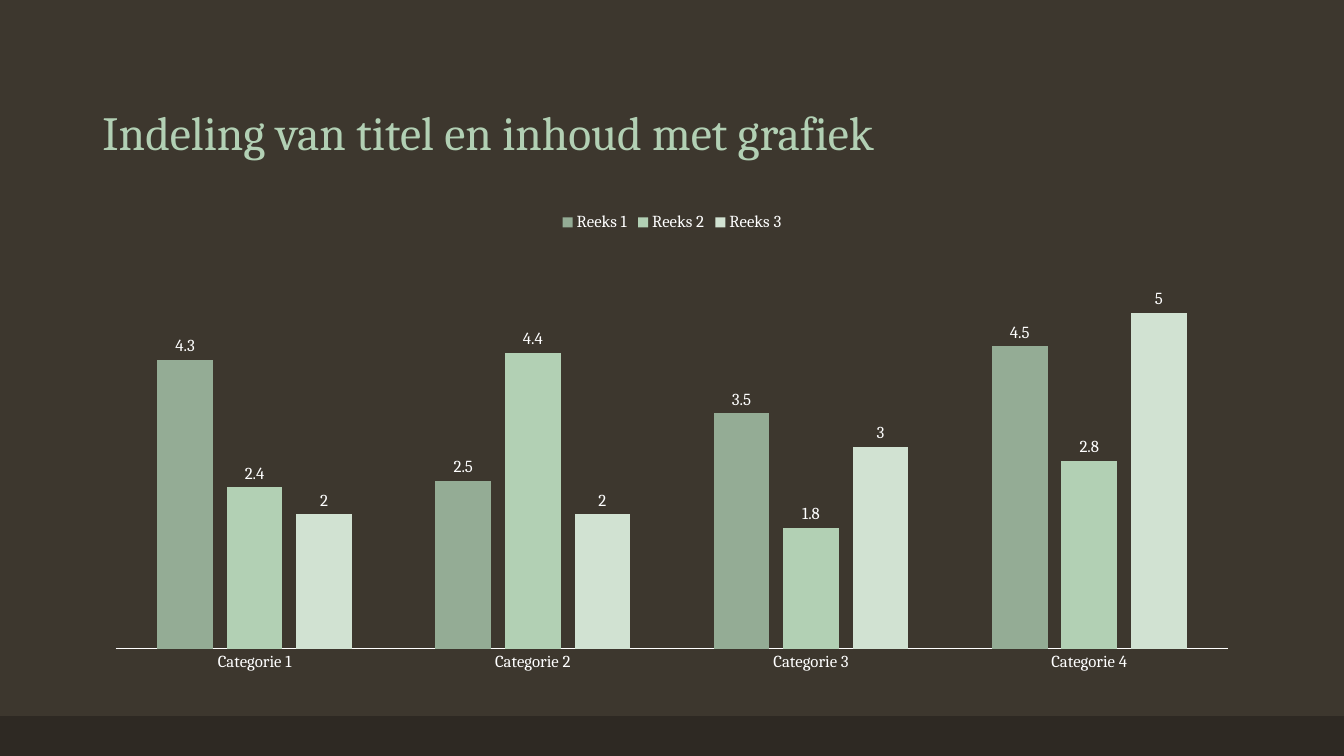
from dataclasses import dataclass

from pptx import Presentation
from pptx import util as u
from pptx.chart.data import CategoryChartData
from pptx.dml.color import RGBColor
from pptx.enum import chart as ch
from pptx.enum import shapes, text

PX = 9525
FONT = "Cambria"
WHITE = "FFFFFF"
GREEN = "B2D0B4"


@dataclass
class Series:
    name: str
    values: tuple[float, ...]
    colour: str


@dataclass
class Area:
    left: int
    top: int
    width: int
    height: int

    def emu(self) -> tuple[int, ...]:
        return tuple(n * PX for n in (self.left, self.top, self.width, self.height))


PAGE = Area(0, 0, 1280, 720)
FOOTER = Area(0, 682, 1280, 38)
TITLE = Area(88, 38, 1104, 120)
CHART = Area(88, 192, 1104, 457)

CATEGORIES = [f"Categorie {number}" for number in range(1, 5)]
SERIES = [
    Series("Reeks 1", (4.3, 2.5, 3.5, 4.5), "94AC95"),
    Series("Reeks 2", (2.4, 4.4, 1.8, 2.8), GREEN),
    Series("Reeks 3", (2, 2, 3, 5), "D1E2D2"),
]


def paint(fill, colour: str) -> None:
    fill.solid()
    fill.fore_color.rgb = RGBColor.from_string(colour)


def style_font(font, size: int, colour: str) -> None:
    font.name = FONT
    font.size = u.Pt(size)
    font.bold = False
    paint(font.fill, colour)


def draw_footer(page) -> None:
    band = page.shapes.add_shape(shapes.MSO_SHAPE.RECTANGLE, *FOOTER.emu())
    band.shadow.inherit = False
    paint(band.fill, "2E2923")
    band.line.fill.background()


def draw_title(page, wording: str) -> None:
    title = page.shapes.title
    title.left, title.top, title.width, title.height = TITLE.emu()
    frame = title.text_frame
    frame.word_wrap = True
    frame.auto_size = text.MSO_AUTO_SIZE.NONE
    frame.vertical_anchor = text.MSO_ANCHOR.BOTTOM
    para = frame.paragraphs[0]
    para.alignment = text.PP_ALIGN.LEFT
    para.line_spacing = 0.9
    span = para.add_run()
    span.text = wording
    style_font(span.font, 34, GREEN)


def draw_chart(page) -> None:
    data = CategoryChartData()
    data.categories = CATEGORIES
    for series in SERIES:
        data.add_series(series.name, series.values)
    chart = page.shapes.add_chart(
        ch.XL_CHART_TYPE.COLUMN_CLUSTERED, *CHART.emu(), data
    ).chart
    style_font(chart.font, 10, WHITE)
    chart.has_title = False
    chart.has_legend = True
    chart.legend.position = ch.XL_LEGEND_POSITION.TOP
    chart.legend.include_in_layout = False
    style_font(chart.legend.font, 12, WHITE)

    value_axis = chart.value_axis
    value_axis.visible = False
    value_axis.has_major_gridlines = False
    value_axis.minimum_scale = 0
    value_axis.maximum_scale = 6

    category_axis = chart.category_axis
    category_axis.major_tick_mark = ch.XL_TICK_MARK.NONE
    category_axis.minor_tick_mark = ch.XL_TICK_MARK.NONE
    style_font(category_axis.tick_labels.font, 12, WHITE)
    paint(category_axis.format.line.fill, WHITE)
    category_axis.format.line.width = u.Pt(0.75)

    plot = chart.plots[0]
    plot.vary_by_categories = False
    plot.gap_width = 150
    plot.overlap = -25
    for columns, series in zip(plot.series, SERIES):
        paint(columns.format.fill, series.colour)
        labels = columns.data_labels
        labels.show_value = True
        labels.position = ch.XL_LABEL_POSITION.OUTSIDE_END
        style_font(labels.font, 12, WHITE)


def main() -> None:
    deck = Presentation()
    deck.slide_width, deck.slide_height = PAGE.emu()[2:]
    page = deck.slides.add_slide(deck.slide_layouts.get_by_name("Title Only"))
    paint(page.background.fill, "3D372E")
    draw_footer(page)
    draw_title(page, "Indeling van titel en inhoud met grafiek")
    draw_chart(page)
    deck.save("out.pptx")


if __name__ == "__main__":
    main()
